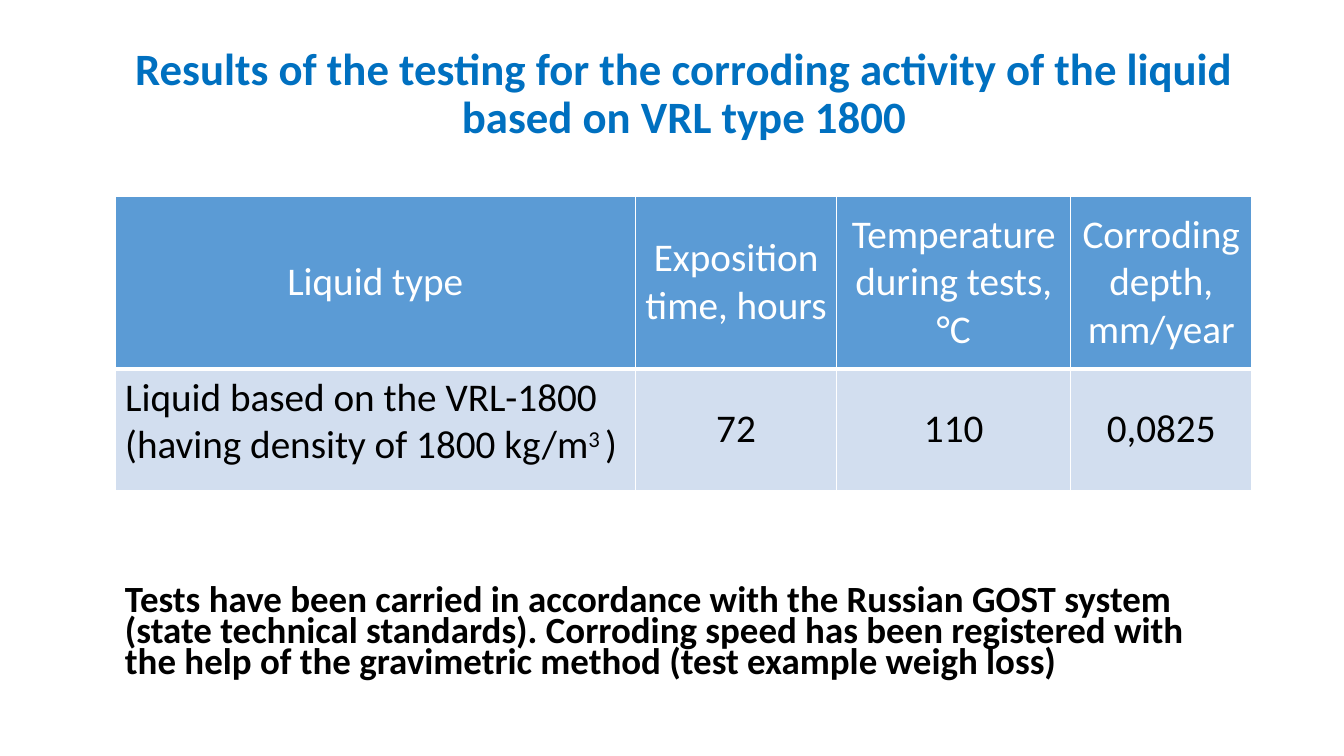
from lxml import etree
from pptx import Presentation
from pptx.dml.color import RGBColor
from pptx.enum.text import MSO_ANCHOR, PP_ALIGN
from pptx.oxml.ns import qn
from pptx.util import Cm, Pt

LEFT, CENTER = PP_ALIGN.LEFT, PP_ALIGN.CENTER
TOP, MIDDLE = MSO_ANCHOR.TOP, MSO_ANCHOR.MIDDLE

# Content
TITLE = ("Results of the testing for the corroding activity of the liquid "
         "based on VRL type 1800")
NOTE = ("Tests have been carried in accordance with the Russian GOST system "
        "(state technical standards). Corroding speed has been registered with "
        "the help of the gravimetric method (test example weigh loss)")
HEADER = ["Liquid type", "Exposition time, hours",
          "Temperature during tests, °С", "Corroding depth, mm/year"]
LIQUID = ["Liquid based on the VRL-1800 (having density of 1800 kg/m", "3 ", ")"]
SUPERSCRIPT = "3 "
RESULTS = ["72", "110", "0,0825"]

# Layout in cm
TITLE_BOX = (2.97, 0.69, 28.55, 3.4)
NOTE_BOX = (2.9, 14.55, 28.55, 2.84)
TABLE_AT = (2.9, 4.95)
COL_WIDTHS = [13.11, 5.08, 5.89, 4.57]
ROW_HEIGHTS = [4.34, 3.07]

FONT = "Calibri"
BLUE, BLACK, WHITE = "0070C0", "000000", "FFFFFF"
HEADER_FILL, BODY_FILL = "5B9BD5", "D2DEEF"


def color(value):
    return RGBColor.from_string(value)


def write(p, parts, size, rgb, align, bold=False):
    p.alignment = align
    for part in parts:
        r = p.add_run()
        r.text = part
        r.font.name, r.font.size, r.font.bold = FONT, Pt(size), bold
        r.font.color.rgb = color(rgb)
        if part == SUPERSCRIPT:
            r.font._element.set("baseline", "30000")


def add_text(slide, box, text, size, rgb, align, spacing):
    tf = slide.shapes.add_textbox(*map(Cm, box)).text_frame
    tf.word_wrap = True
    tf.vertical_anchor = MIDDLE
    p = tf.paragraphs[0]
    p.line_spacing = spacing
    write(p, [text], size, rgb, align, bold=True)


def set_borders(cell, widths):
    tc_pr = cell._tc.get_or_add_tcPr()
    for side, width in widths.items():
        ln = etree.SubElement(tc_pr, qn("a:ln" + side), w=str(Pt(width)))
        fill = etree.SubElement(ln, qn("a:solidFill"))
        etree.SubElement(fill, qn("a:srgbClr"), val=WHITE)


prs = Presentation()
prs.slide_width, prs.slide_height = Cm(33.87), Cm(19.05)
slide = prs.slides.add_slide(prs.slide_layouts[6])

# Title and closing note
add_text(slide, TITLE_BOX, TITLE, 32, BLUE, CENTER, 0.9)
add_text(slide, NOTE_BOX, NOTE, 26.4, BLACK, LEFT, 0.7)

# Results table
rows = [[[text] for text in HEADER], [LIQUID] + [[text] for text in RESULTS]]
size = (sum(COL_WIDTHS), sum(ROW_HEIGHTS))
table = slide.shapes.add_table(len(rows), len(HEADER),
                               *map(Cm, TABLE_AT + size)).table
for col, width in zip(table.columns, COL_WIDTHS):
    col.width = Cm(width)
for row, height in zip(table.rows, ROW_HEIGHTS):
    row.height = Cm(height)

for i, row in enumerate(rows):
    is_header = i == 0
    for j, parts in enumerate(row):
        cell = table.cell(i, j)
        is_liquid = parts is LIQUID
        set_borders(cell, {"L": 1, "R": 1, "T": 1, "B": 3 if is_header else 1})
        cell.fill.solid()
        cell.fill.fore_color.rgb = color(HEADER_FILL if is_header else BODY_FILL)
        cell.vertical_anchor = TOP if is_liquid else MIDDLE
        write(cell.text_frame.paragraphs[0], parts, 28,
              WHITE if is_header else BLACK, LEFT if is_liquid else CENTER)

prs.save("out.pptx")
